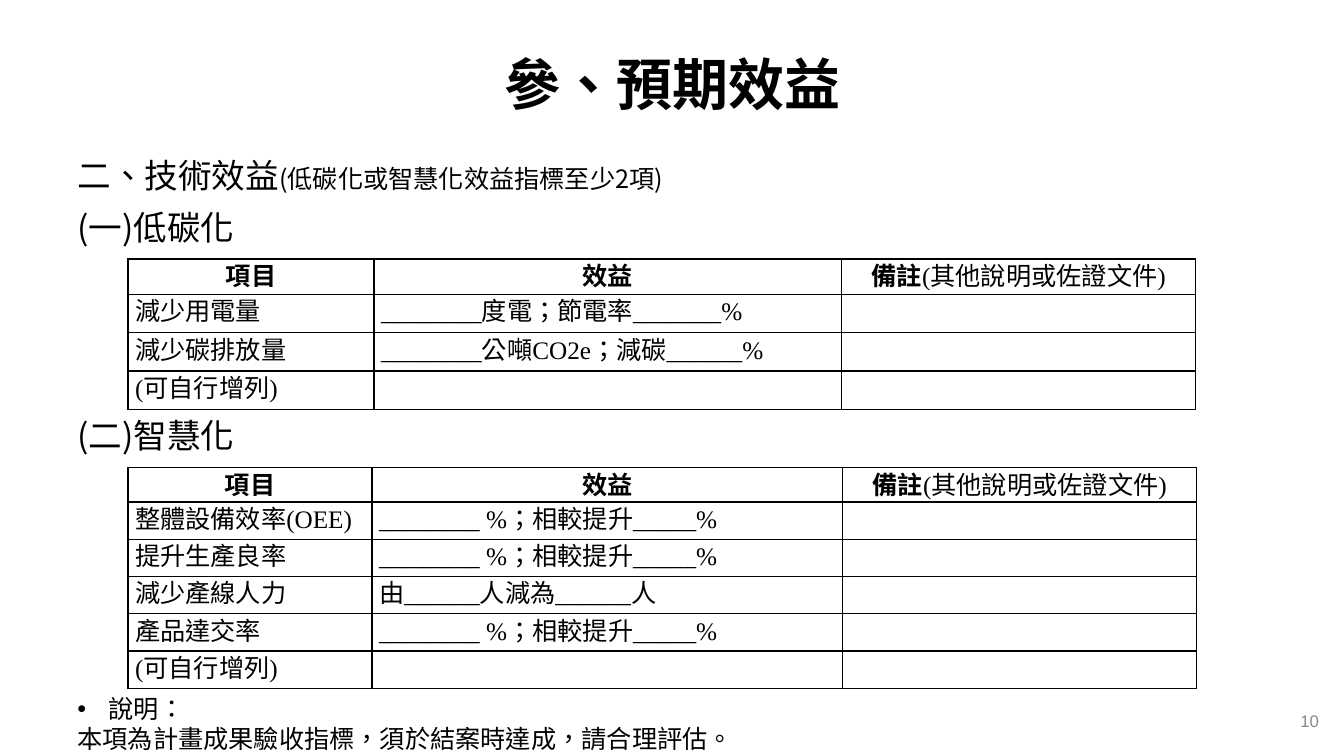
from lxml import etree
from pptx import Presentation
from pptx.dml.color import RGBColor
from pptx.enum.text import MSO_ANCHOR, PP_ALIGN
from pptx.oxml.ns import qn
from pptx.util import Inches, Pt

LEFT, CENTER, RIGHT = PP_ALIGN.LEFT, PP_ALIGN.CENTER, PP_ALIGN.RIGHT
TOP, MIDDLE = MSO_ANCHOR.TOP, MSO_ANCHOR.MIDDLE
BLACK = RGBColor(0x00, 0x00, 0x00)
GRAY = RGBColor(0x89, 0x89, 0x89)
SERIF, SANS, NUMBER_FONT = "Times New Roman", "Noto Sans CJK SC", "Arial"
MARGIN = 0.67
TABLE_LEFT = 1.27


def write(paragraph, text, size=18, font=SERIF, color=BLACK, bold=False,
          align=LEFT, spacing=None):
    paragraph.alignment = align
    if spacing:
        paragraph.line_spacing = Pt(spacing)
    run = paragraph.add_run()
    run.text = text
    run.font.size = Pt(size)
    run.font.name = font
    run.font.bold = bold
    run.font.color.rgb = color
    run._r.get_or_add_rPr().set("lang", "zh-TW")


def add_box(left, top, width, height, anchor=MIDDLE):
    frame = slide.shapes.add_textbox(
        Inches(left), Inches(top), Inches(width), Inches(height)).text_frame
    frame.word_wrap = True
    frame.vertical_anchor = anchor
    return frame


presentation = Presentation()
presentation.slide_width = Inches(13.33)
presentation.slide_height = Inches(7.5)
slide = presentation.slides.add_slide(presentation.slide_layouts[6])

title = add_box(MARGIN, 0.3, 12, 1.05)
write(title.paragraphs[0], "參、預期效益", size=40, bold=True, align=CENTER)

headings = [
    (1.49, "二、技術效益", "(低碳化或智慧化效益指標至少2項)"),
    (2.0, "(一)低碳化", ""),
    (4.07, "(二)智慧化", ""),
]
for top, heading, remark in headings:
    paragraph = add_box(MARGIN, top, 12, 0.5).paragraphs[0]
    write(paragraph, heading, size=24, font=SANS)
    if remark:
        write(paragraph, remark, font=SANS)

HEADER = ("項目", "效益", "備註")
RATE = "________ %；相較提升_____%"
tables = [
    (2.57, (2.44, 4.64, 3.51), 0.35, 0.38, [
        ("減少用電量", "________度電；節電率_______%", ""),
        ("減少碳排放量", "________公噸CO2e；減碳______%", ""),
        ("(可自行增列)", "", ""),
    ]),
    (4.64, (2.42, 4.67, 3.51), 0.34, 0.37, [
        ("整體設備效率(OEE)", RATE, ""),
        ("提升生產良率", RATE, ""),
        ("減少產線人力", "由______人減為______人", ""),
        ("產品達交率", RATE, ""),
        ("(可自行增列)", "", ""),
    ]),
]
for top, widths, header_height, row_height, items in tables:
    rows = [HEADER] + items
    heights = [header_height] + [row_height] * len(items)
    table = slide.shapes.add_table(
        len(rows), len(widths), Inches(TABLE_LEFT), Inches(top),
        Inches(sum(widths)), Inches(sum(heights))).table
    table.first_row = False
    table.horz_banding = False
    for column, width in zip(table.columns, widths):
        column.width = Inches(width)
    for row_index, texts in enumerate(rows):
        table.rows[row_index].height = Inches(heights[row_index])
        is_header = row_index == 0
        for column_index, text in enumerate(texts):
            cell = table.cell(row_index, column_index)
            cell.margin_left = cell.margin_right = Inches(0.07)
            cell.margin_top = cell.margin_bottom = 0
            properties = cell._tc.get_or_add_tcPr()
            for side in ("a:lnL", "a:lnR", "a:lnT", "a:lnB"):
                border = etree.SubElement(properties, qn(side), w=str(Pt(1)))
                fill = etree.SubElement(border, qn("a:solidFill"))
                etree.SubElement(fill, qn("a:srgbClr"), val=str(BLACK))
            cell.fill.background()
            paragraph = cell.text_frame.paragraphs[0]
            align = CENTER if is_header else LEFT
            write(paragraph, text, bold=is_header, align=align, spacing=24)
            if is_header and text == "備註":
                write(paragraph, "(其他說明或佐證文件)", align=align, spacing=24)

notes = add_box(MARGIN, 6.83, 7.29, 0.71, anchor=TOP)
label = notes.paragraphs[0]
write(label, "說明：", font=SANS, spacing=21.5)
label_properties = label._p.get_or_add_pPr()
label_properties.set("marL", str(Inches(0.31)))
label_properties.set("indent", str(-Inches(0.31)))
etree.SubElement(label_properties, qn("a:buFont"), typeface=NUMBER_FONT)
etree.SubElement(label_properties, qn("a:buChar"), char="•")
write(notes.add_paragraph(), "本項為計畫成果驗收指標，須於結案時達成，請合理評估。",
      font=SANS, spacing=21.5)

page_number = add_box(10.07, 6.95, 3.11, 0.4)
write(page_number.paragraphs[0], "10", size=12, font=NUMBER_FONT, color=GRAY,
      align=RIGHT)

presentation.save("out.pptx")
